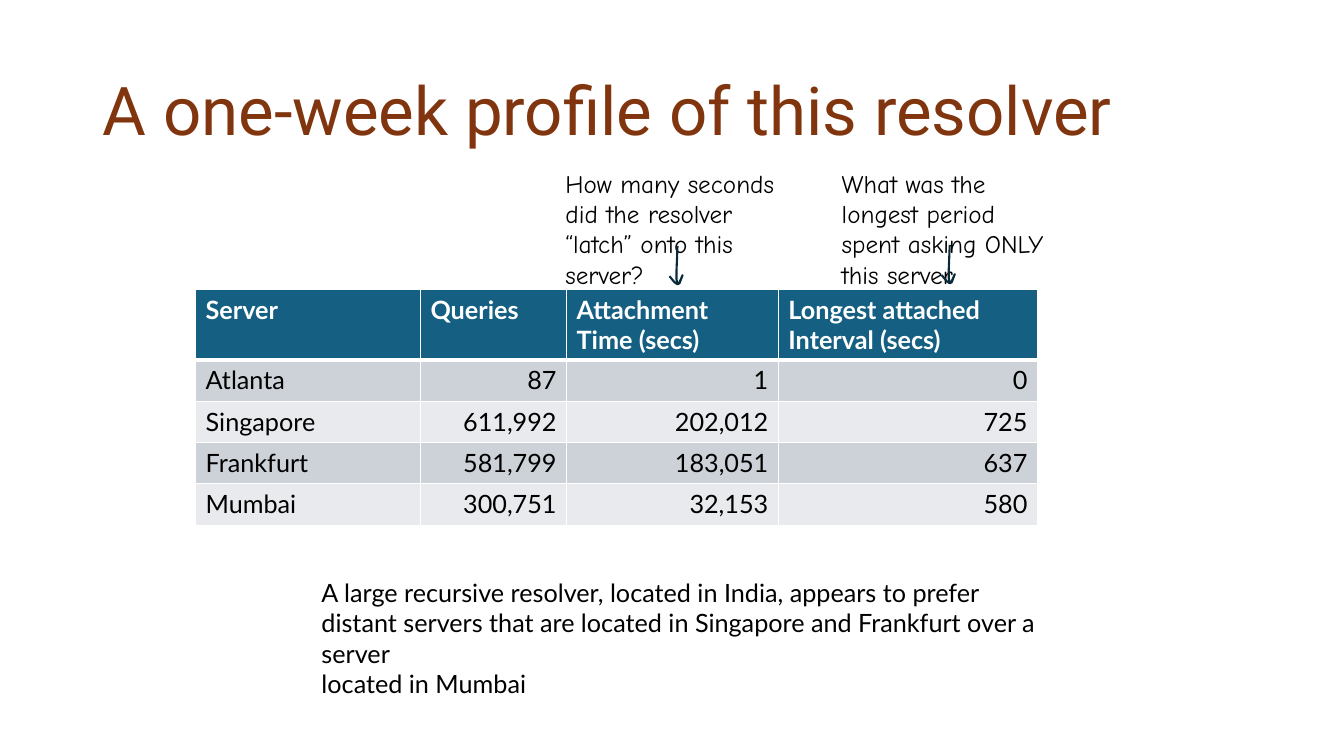
from dataclasses import dataclass

from lxml import etree
from pptx import Presentation
from pptx import util as u
from pptx.dml.color import RGBColor
from pptx.enum import text as t
from pptx.oxml import ns

WHITE, BLACK = "FFFFFF", "000000"
HEADER_FILL, BAND_FILLS = "156082", ("CCD2D8", "E8EAED")
COLUMN_WIDTHS = (2.23, 1.45, 2.1, 2.57)
HEADER_HEIGHT, ROW_HEIGHT = 0.68, 0.41
PROFILE = (
    ("Server", "Queries", "Attachment Time (secs)", "Longest attached Interval (secs)"),
    ("Atlanta", "87", "1", "0"),
    ("Singapore", "611,992", "202,012", "725"),
    ("Frankfurt", "581,799", "183,051", "637"),
    ("Mumbai", "300,751", "32,153", "580"),
)
ARROW_STROKE = (
    (0, 0), (-0.01, 0.25), (-0.01, 0.33), (0, 0.38), (0.02, 0.37),
    (0.05, 0.29), (0.02, 0.36), (0, 0.38), (-0.03, 0.36), (-0.08, 0.3),
)


@dataclass
class Question:
    wording: str
    left: float
    arrow_x: float
    arrow_y: float


QUESTIONS = (
    Question("How many seconds did the resolver “latch” onto this server?", 5.51, 6.72, 2.44),
    Question("What was the longest period spent asking ONLY this server", 8.25, 9.42, 2.43),
)


def color(code: str) -> RGBColor:
    return RGBColor.from_string(code)


def write(frame, wording: str, *, font: str = "Lato", size: float = 18, ink: str = BLACK,
          bold: bool = False, align=t.PP_ALIGN.LEFT, spacing: float = 1.0) -> None:
    frame.word_wrap = True
    for index, line in enumerate(wording.split("\n")):
        paragraph = frame.add_paragraph() if index else frame.paragraphs[0]
        paragraph.alignment = align
        paragraph.line_spacing = spacing
        run = paragraph.add_run()
        run.text = line
        run.font.name = font
        run.font.size = u.Pt(size)
        run.font.bold = bold
        run.font.color.rgb = color(ink)


def add_text(slide, wording: str, left: float, top: float, width: float, height: float,
             *, anchor=t.MSO_ANCHOR.TOP, **text_format) -> None:
    box = slide.shapes.add_textbox(*map(u.Inches, (left, top, width, height)))
    box.text_frame.vertical_anchor = anchor
    write(box.text_frame, wording, **text_format)


def add_borders(cell, top: float, bottom: float) -> None:
    properties = cell._tc.get_or_add_tcPr()
    for side, points in (("L", 1), ("R", 1), ("T", top), ("B", bottom)):
        line = etree.SubElement(properties, ns.qn(f"a:ln{side}"), w=str(u.Pt(points)))
        fill = etree.SubElement(line, ns.qn("a:solidFill"))
        etree.SubElement(fill, ns.qn("a:srgbClr"), val=WHITE)


def add_profile(slide, left: float, top: float) -> None:
    heights = [HEADER_HEIGHT] + [ROW_HEIGHT] * (len(PROFILE) - 1)
    profile = slide.shapes.add_table(
        len(PROFILE), len(COLUMN_WIDTHS), u.Inches(left), u.Inches(top),
        u.Inches(sum(COLUMN_WIDTHS)), u.Inches(sum(heights))).table
    for column, width in zip(profile.columns, COLUMN_WIDTHS):
        column.width = u.Inches(width)
    for row, (height, entries) in enumerate(zip(heights, PROFILE)):
        profile.rows[row].height = u.Inches(height)
        is_header = row == 0
        for column, entry in enumerate(entries):
            cell = profile.cell(row, column)
            add_borders(cell, 3 if row == 1 else 1, 3 if is_header else 1)
            cell.fill.solid()
            cell.fill.fore_color.rgb = color(HEADER_FILL if is_header else BAND_FILLS[(row - 1) % 2])
            is_number = column > 0 and not is_header
            write(cell.text_frame, entry, bold=is_header, ink=WHITE if is_header else BLACK,
                  align=t.PP_ALIGN.RIGHT if is_number else t.PP_ALIGN.LEFT)


def add_arrow(slide, x: float, y: float) -> None:
    points = [(u.Inches(x + dx), u.Inches(y + dy)) for dx, dy in ARROW_STROKE]
    builder = slide.shapes.build_freeform(*points[0])
    builder.add_line_segments(points[1:], close=False)
    arrow = builder.convert_to_shape()
    arrow.shadow.inherit = False
    arrow.fill.background()
    arrow.line.color.rgb = color("092A39")
    arrow.line.width = u.Pt(1.5)


def main() -> None:
    deck = Presentation()
    deck.slide_width, deck.slide_height = u.Inches(13.33), u.Inches(7.5)
    slide = deck.slides.add_slide(deck.slide_layouts[6])
    add_text(slide, "A one-week profile of this resolver", 0.92, 0.4, 11.5, 1.45,
             anchor=t.MSO_ANCHOR.MIDDLE, font="Roboto", size=48, ink="80350E", spacing=0.9)
    add_profile(slide, 1.94, 2.87)
    for question in QUESTIONS:
        add_text(slide, question.wording, question.left, 1.62, 2.31, 1.01, font="Comic Neue")
    for question in QUESTIONS:
        add_arrow(slide, question.arrow_x, question.arrow_y)
    add_text(slide, "A large recursive resolver, located in India, appears to prefer distant servers "
             "that are located in Singapore and Frankfurt over a server\nlocated in Mumbai",
             3.09, 5.68, 7.45, 1.01)
    deck.save("out.pptx")


if __name__ == "__main__":
    main()
